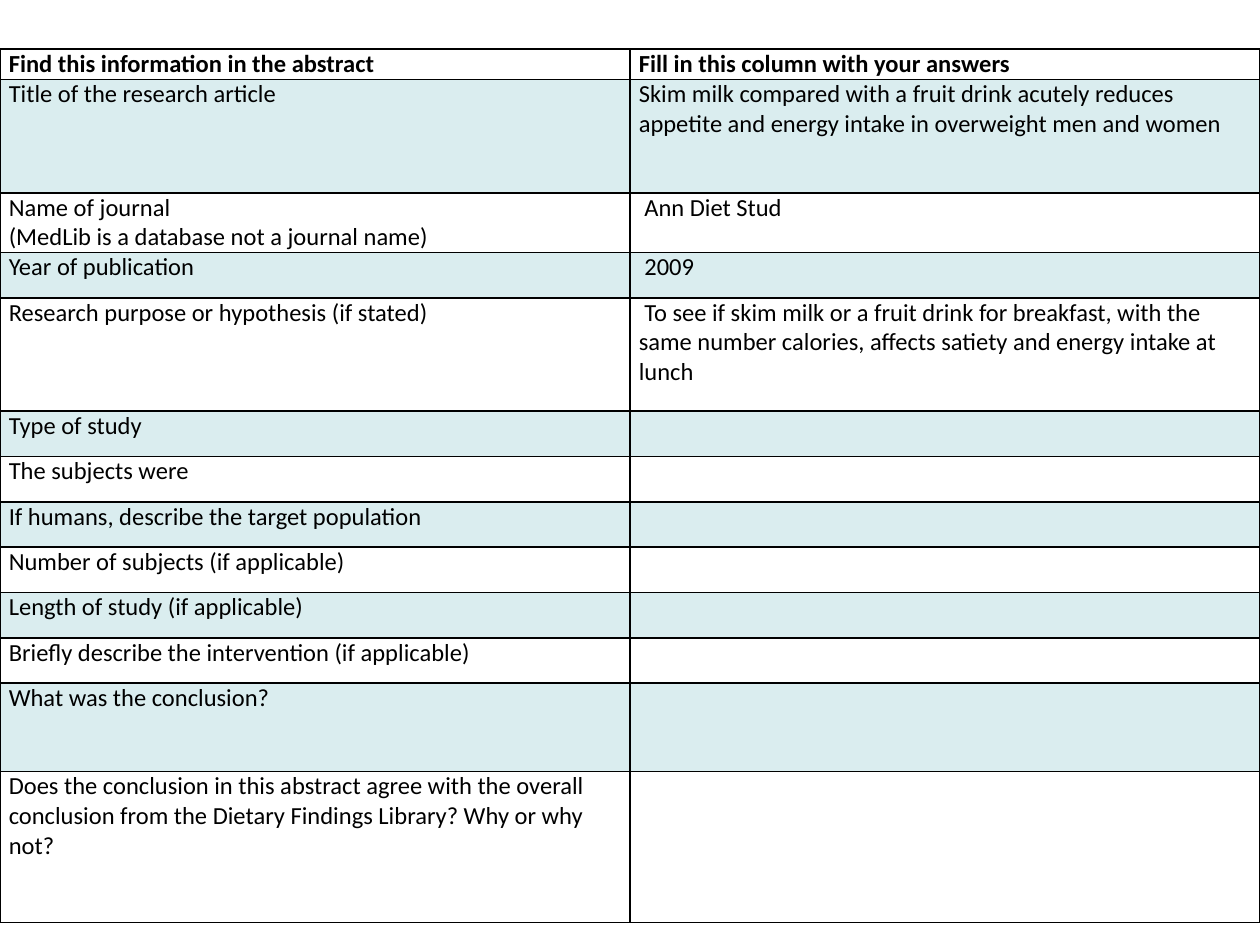
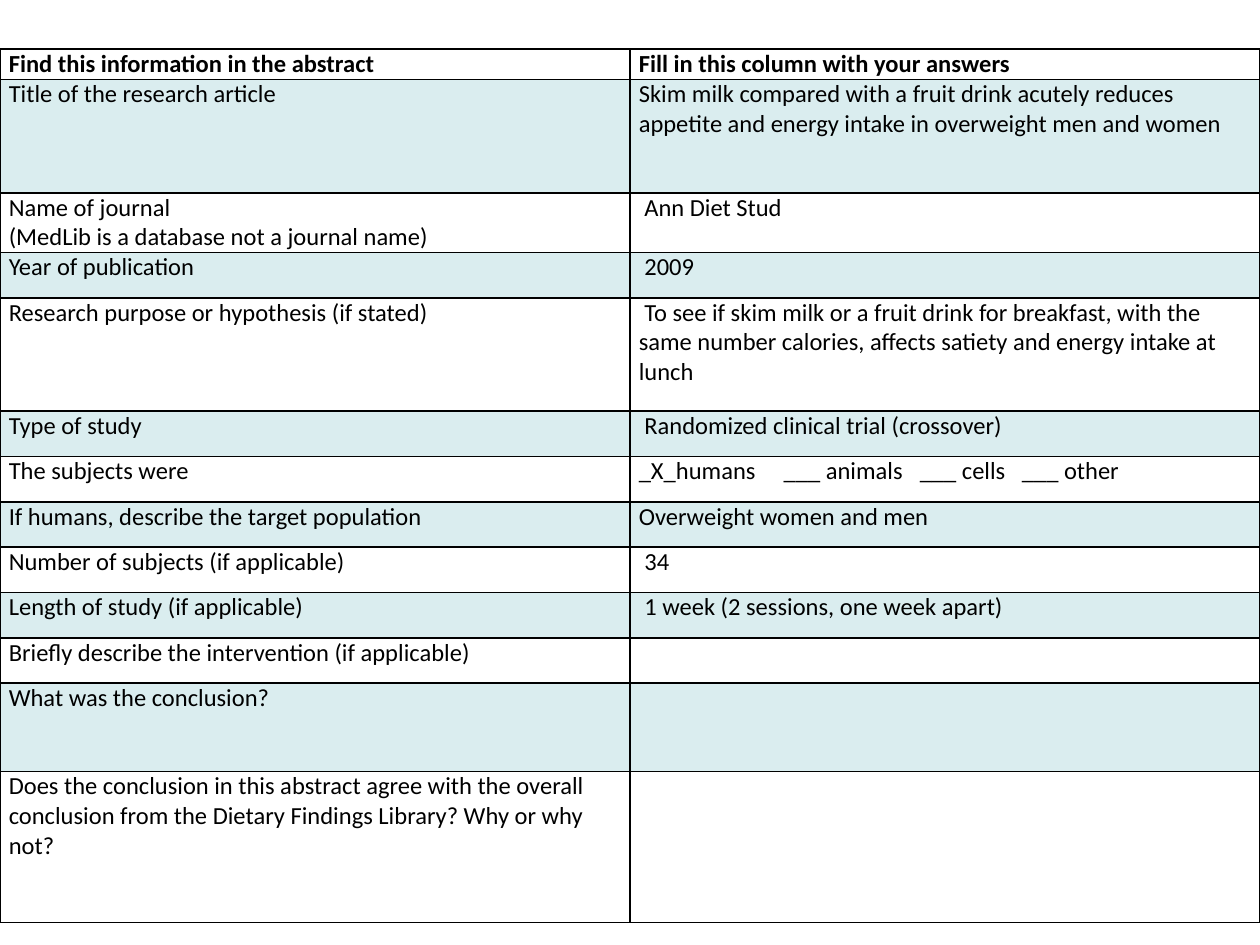
from typing import NamedTuple

from lxml import etree
from pptx import Presentation
from pptx.dml.color import RGBColor
from pptx.oxml.ns import qn
from pptx.util import Inches, Pt

FONT = "Calibri"
SIZE = Pt(14)
BLACK = "000000"
BAND = "DAEDEF"
TOP = 0.39
WIDTH = 5
SIDES = ("a:lnL", "a:lnR", "a:lnT", "a:lnB")
TABS = (1.15, 2.23, 3.04)


class Row(NamedTuple):
    height: float
    prompt: str
    answer: str = ""


HEAD = Row(0.24, "Find this information in the abstract",
           "Fill in this column with your answers")

GIVEN = [
    Row(0.9, "Title of the research article",
        "Skim milk compared with a fruit drink acutely reduces appetite "
        "and energy intake in overweight men and women"),
    Row(0.47, "Name of journal\n(MedLib is a database not a journal name)",
        " Ann Diet Stud"),
    Row(0.36, "Year of publication", " 2009"),
    Row(0.9, "Research purpose or hypothesis (if stated)",
        " To see if skim milk or a fruit drink for breakfast, with the same "
        "number calories, affects satiety and energy intake at lunch"),
]

STUDY = [
    Row(0.36, "Type of study", " Randomized clinical trial (crossover)"),
    Row(0.36, "The subjects were",
        "_X_humans\t___ animals\t___ cells\t___ other"),
    Row(0.36, "If humans, describe the target population",
        "Overweight women and men"),
    Row(0.36, "Number of subjects (if applicable)", " 34"),
    Row(0.36, "Length of study (if applicable)",
        " 1 week (2 sessions, one week apart)"),
]

OPEN = [
    Row(0.36, "Briefly describe the intervention (if applicable)"),
    Row(0.7, "What was the conclusion?"),
    Row(1.2, "Does the conclusion in this abstract agree with the overall "
        "conclusion from the Dietary Findings Library? Why or why not?"),
]


def color(code: str) -> RGBColor:
    return RGBColor.from_string(code)


def add_edges(cell) -> None:
    props = cell._tc.get_or_add_tcPr()
    for side in SIDES:
        line = etree.SubElement(props, qn(side), w=str(Pt(1)))
        fill = etree.SubElement(line, qn("a:solidFill"))
        etree.SubElement(fill, qn("a:srgbClr"), val=BLACK)


def add_tabs(para) -> None:
    stops = etree.SubElement(para._p.get_or_add_pPr(), qn("a:tabLst"))
    for stop in TABS:
        etree.SubElement(stops, qn("a:tab"), pos=str(Inches(stop)), algn="l")


def fill_cell(cell, text: str, bold: bool, band: bool) -> None:
    cell.margin_left = cell.margin_right = Inches(0.07)
    cell.margin_top = cell.margin_bottom = 0
    add_edges(cell)
    if band:
        cell.fill.solid()
        cell.fill.fore_color.rgb = color(BAND)
    else:
        cell.fill.background()
    cell.text_frame.text = text
    for para in cell.text_frame.paragraphs:
        if "\t" in text:
            add_tabs(para)
        for run in para.runs:
            run.font.name = FONT
            run.font.size = SIZE
            run.font.bold = bold
            run.font.color.rgb = color(BLACK)


def add_sheet(deck, rows: list[Row]) -> None:
    """Add a slide with a two-column worksheet that spans its width."""
    slide = deck.slides.add_slide(deck.slide_layouts[6])
    height = sum(row.height for row in rows)
    table = slide.shapes.add_table(
        len(rows), 2, 0, Inches(TOP), Inches(2 * WIDTH), Inches(height)).table
    table.first_row = table.horz_banding = False
    for column in table.columns:
        column.width = Inches(WIDTH)
    for i, row in enumerate(rows):
        table.rows[i].height = Inches(row.height)
        for j, text in enumerate((row.prompt, row.answer)):
            fill_cell(table.cell(i, j), text, bold=i == 0, band=i % 2 == 1)


def main() -> None:
    deck = Presentation()
    deck.slide_width, deck.slide_height = Inches(10), Inches(7.5)
    blank = [row._replace(answer="") for row in STUDY]
    for study in (blank, STUDY):
        add_sheet(deck, [HEAD, *GIVEN, *study, *OPEN])
    deck.save("out.pptx")


if __name__ == "__main__":
    main()
